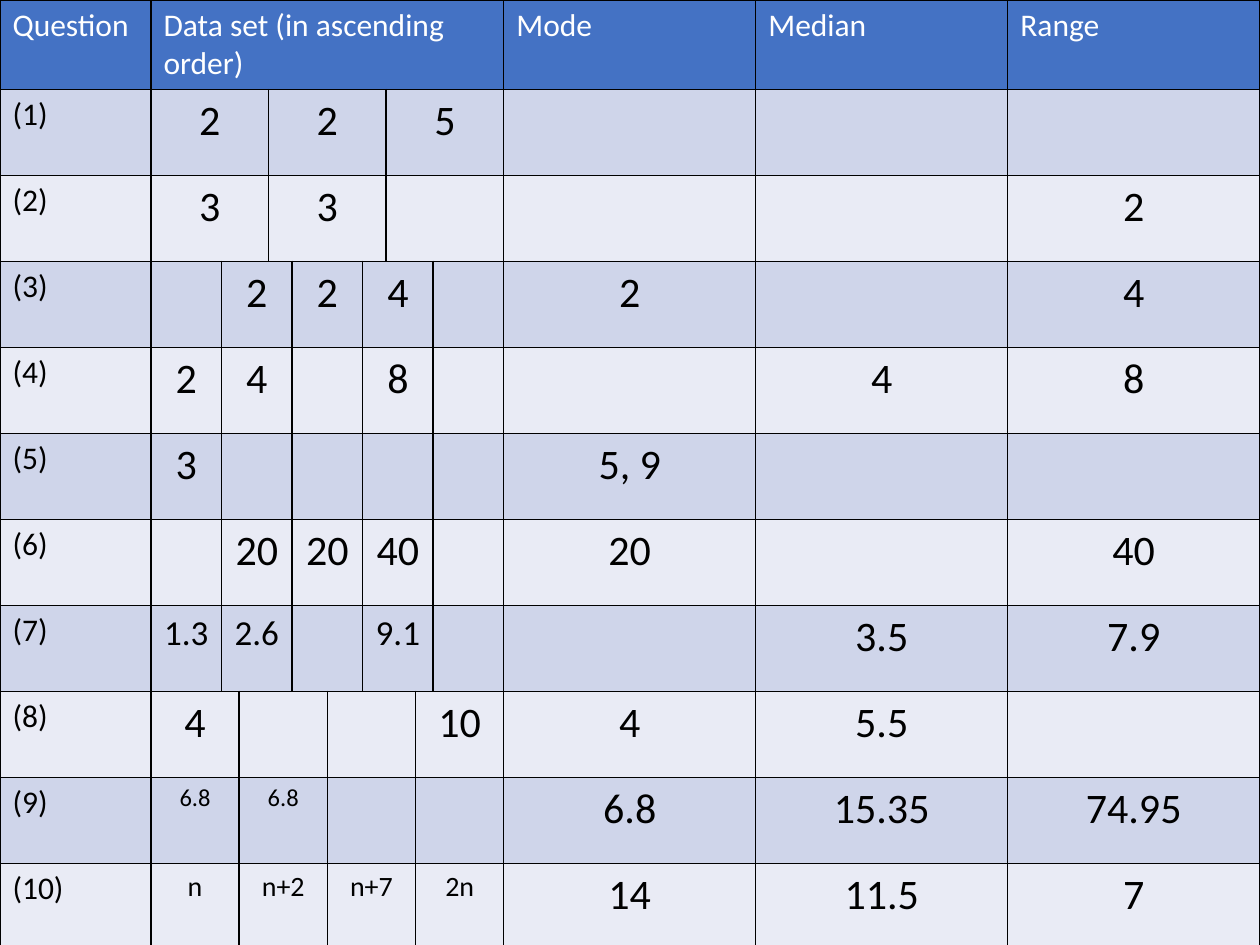
from lxml.etree import SubElement
from pptx import Presentation
from pptx.dml.color import RGBColor
from pptx.enum.text import PP_ALIGN
from pptx.oxml.ns import qn
from pptx.util import Pt

PX = 914400 / 126  # EMU in one px


def color(hex_string):
    return RGBColor.from_string(hex_string)


def write(cell, text, size=18, ink="000000", align=PP_ALIGN.LEFT):
    para = cell.text_frame.paragraphs[0]
    para.alignment = align
    span = para.add_run()
    span.text = text
    span.font.name = "Calibri"
    span.font.size = Pt(size)
    span.font.bold = False
    span.font.color.rgb = color(ink)


# Each row: data set, its text size, then mode, median and range
questions = [
    (["2", "2", "5"], 24, ["", "", ""]),
    (["3", "3", ""], 24, ["", "", "2"]),
    (["", "2", "2", "4", ""], 24, ["2", "", "4"]),
    (["2", "4", "", "8", ""], 24, ["", "4", "8"]),
    (["3", "", "", "", ""], 24, ["5, 9", "", ""]),
    (["", "20", "20", "40", ""], 24, ["20", "", "40"]),
    (["1.3", "2.6", "", "9.1", ""], 20, ["", "3.5", "7.9"]),
    (["4", "", "", "10"], 24, ["4", "5.5", ""]),
    (["6.8", "6.8", "", ""], 14, ["6.8", "15.35", "74.95"]),
    (["n", "n+2", "n+7", "2n"], 16, ["14", "11.5", "7"]),
]

# Data columns: every edge of a split into thirds, quarters or fifths
DATA_WIDTH = 353
UNITS = 60
edges = sorted({UNITS * i // parts for parts in (3, 4, 5) for i in range(parts + 1)})
data_widths = [(b - a) * DATA_WIDTH / UNITS for a, b in zip(edges, edges[1:])]
widths = [151] + data_widths + [252] * 3
first_result = len(edges)

# Slide and table
deck = Presentation()
deck.slide_width = int(1260 * PX)
deck.slide_height = int(945 * PX)
page = deck.slides.add_slide(deck.slide_layouts[6])
row_count = len(questions) + 1
frame = page.shapes.add_table(row_count, len(widths), 0, 0,
                              int(1260 * PX), int(86 * row_count * PX))
table = frame.table
for column, width in zip(table.columns, widths):
    column.width = int(width * PX)
for row in table.rows:
    row.height = int(86 * PX)

# Borders and banded fills
for row_number, row in enumerate(table.rows):
    band = "CFD5EA" if row_number % 2 else "E9EBF5"
    for cell in row.cells:
        properties = cell._tc.get_or_add_tcPr()
        for side in ("a:lnL", "a:lnR", "a:lnT", "a:lnB"):
            line = SubElement(properties, qn(side), w="12700")
            fill = SubElement(line, qn("a:solidFill"))
            SubElement(fill, qn("a:srgbClr"), val="000000")
        cell.fill.solid()
        cell.fill.fore_color.rgb = color(band if row_number else "4472C4")

# Header
table.cell(0, 1).merge(table.cell(0, first_result - 1))
headings = {0: "Question", 1: "Data set (in ascending order)",
            first_result: "Mode", first_result + 1: "Median", first_result + 2: "Range"}
for column_number, heading in headings.items():
    write(table.cell(0, column_number), heading, ink="FFFFFF")

# Questions
for number, (values, size, results) in enumerate(questions, 1):
    write(table.cell(number, 0), f"({number})")
    for i, value in enumerate(values):
        start = edges.index(UNITS * i // len(values)) + 1
        end = edges.index(UNITS * (i + 1) // len(values))
        cell = table.cell(number, start)
        if end > start:
            cell.merge(table.cell(number, end))
        if value:
            write(cell, value, size=size, align=PP_ALIGN.CENTER)
    for column_number, result in enumerate(results, first_result):
        if result:
            write(table.cell(number, column_number), result, size=24, align=PP_ALIGN.CENTER)

deck.save("out.pptx")
